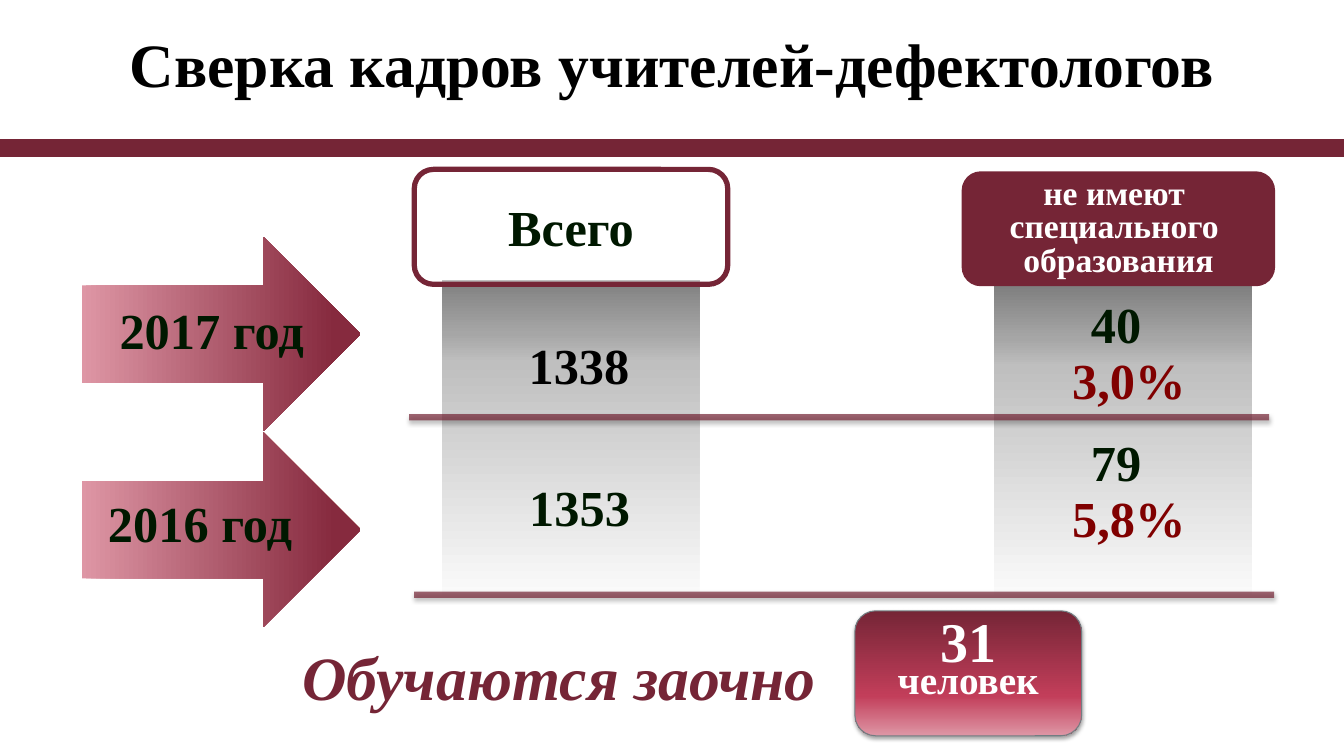
"""Builds a slide on the staffing of special education teachers."""
from lxml import etree
from pptx import Presentation
from pptx.dml.color import RGBColor
from pptx.enum import shapes, text
from pptx.oxml import ns
from pptx.util import Pt

FONT = "Times New Roman"
BLACK = RGBColor(0x00, 0x00, 0x00)
WHITE = RGBColor(0xFF, 0xFF, 0xFF)
WINE = RGBColor(0x75, 0x25, 0x36)
DARK_WINE = RGBColor(0x86, 0x2A, 0x3E)
ROSE = RGBColor(0xC2, 0x3E, 0x5A)
PINK = RGBColor(0xDE, 0x96, 0xA5)
DARK_GREEN = RGBColor(0x00, 0x18, 0x00)
RED = RGBColor(0x80, 0x00, 0x00)
SLATE = RGBColor(0x72, 0x7D, 0x82)
GRAY_STOPS = [(0, RGBColor(0xFA, 0xFA, 0xFA)), (74, RGBColor(0xBF, 0xBF, 0xBF)),
              (83, RGBColor(0xA6, 0xA6, 0xA6)), (100, RGBColor(0x80, 0x80, 0x80))]
ARROW_STOPS = [(0, PINK), (91, DARK_WINE)]
BADGE_STOPS = [(0, WINE), (68, ROSE), (100, PINK)]
MIDDLE = text.MSO_ANCHOR.MIDDLE
CENTER = text.PP_ALIGN.CENTER
SHAPE = shapes.MSO_SHAPE


def add_child(parent, tag, **attributes):
    """Append a drawing element with the given attributes."""
    element = etree.SubElement(parent, ns.qn(tag))
    for name, value in attributes.items():
        element.set(name, str(value))
    return element


def set_alpha(element, percent):
    """Make the colours inside an element partly transparent."""
    for color in list(element.iter(ns.qn("a:srgbClr"))):
        add_child(color, "a:alpha", val=percent * 1000)


def set_effects(shape, shadow=None):
    """Replace the theme shadow by none, or by (opacity, blur, distance)."""
    properties = shape._element.spPr
    for old in properties.findall(ns.qn("a:effectLst")):
        properties.remove(old)
    effects = add_child(properties, "a:effectLst")
    if shadow:
        opacity, blur, distance = shadow
        outer = add_child(effects, "a:outerShdw", blurRad=Pt(blur), dist=Pt(distance),
                          dir=5400000, rotWithShape=0)
        add_child(outer, "a:srgbClr", val=BLACK)
        set_alpha(outer, opacity)


def set_gradient(shape, stops, angle):
    """Fill a shape with a linear gradient, its angle counter-clockwise."""
    shape.fill.gradient()
    shape.fill.gradient_angle = angle
    stop_list = shape._element.spPr.find(".//" + ns.qn("a:gsLst"))
    for old in list(stop_list):
        stop_list.remove(old)
    for position, color in stops:
        stop = add_child(stop_list, "a:gs", pos=position * 1000)
        add_child(stop, "a:srgbClr", val=color)


def write(shape, lines, spacing=None, align=CENTER, anchor=MIDDLE, italic=None):
    """Write lines of (wording, size, colour), one paragraph each."""
    frame = shape.text_frame
    frame.word_wrap = True
    frame.vertical_anchor = anchor
    for index, (wording, size, color) in enumerate(lines):
        paragraph = frame.add_paragraph() if index else frame.paragraphs[0]
        paragraph.alignment = align
        if spacing:
            paragraph.line_spacing = Pt(spacing)
        run = paragraph.add_run()
        run.text = wording
        run.font.name = FONT
        run.font.size = Pt(size)
        run.font.bold = True
        run.font.italic = italic
        run.font.color.rgb = color


def add_box(slide, kind, box, fill=None, gradient=None, line=None, shadow=None):
    """Add a preset shape with a plain or gradient fill."""
    shape = slide.shapes.add_shape(kind, *map(Pt, box))
    if gradient:
        set_gradient(shape, *gradient)
    else:
        shape.fill.solid()
        shape.fill.fore_color.rgb = fill
    if line:
        shape.line.color.rgb, shape.line.width = line[0], Pt(line[1])
    else:
        shape.line.fill.background()
    set_effects(shape, shadow)
    return shape


def add_label(slide, box, lines, **style):
    """Add a text box."""
    write(slide.shapes.add_textbox(*map(Pt, box)), lines, **style)


def add_rule(slide, left, right, top, width, alpha=None, shadow=None):
    """Add a horizontal line."""
    rule = slide.shapes.add_connector(shapes.MSO_CONNECTOR.STRAIGHT,
                                      Pt(left), Pt(top), Pt(right), Pt(top))
    rule.line.color.rgb = WINE
    rule.line.width = Pt(width)
    if alpha:
        set_alpha(rule._element.spPr, alpha)
    set_effects(rule, shadow)


def add_title(slide, wording):
    """Place and fill the title placeholder."""
    title = slide.shapes.title
    title.left, title.top, title.width, title.height = map(Pt, (66.2, 12.2, 828, 78.5))
    write(title, [(wording, 44, BLACK)], spacing=40)


def main():
    """Build and save the slide."""
    presentation = Presentation()
    presentation.slide_width, presentation.slide_height = Pt(960), Pt(540)
    slide = presentation.slides.add_slide(presentation.slide_layouts[5])

    add_title(slide, "Сверка кадров учителей-дефектологов")
    add_rule(slide, 0, 960, 105.8, 12.75)

    for left, top in ((315.4, 200.2), (710, 204.5)):
        add_box(slide, SHAPE.RECTANGLE, (left, top, 184.3, 424.8 - top),
                gradient=(GRAY_STOPS, 90))

    for year, arrow_top, label_box in (("2017", 169.2, (68.4, 203, 165.6, 64.8)),
                                       ("2016", 308.9, (68.4, 321.8, 149, 103))):
        add_box(slide, SHAPE.RIGHT_ARROW, (58.3, arrow_top, 199.4, 139),
                gradient=(ARROW_STOPS, 0))
        add_label(slide, label_box, [(f"{year} год", 36, DARK_GREEN)])

    total = add_box(slide, SHAPE.ROUNDED_RECTANGLE, (295.9, 121, 223.9, 82.1),
                    fill=WHITE, line=(WINE, 3.75))
    set_alpha(total._element.spPr.find(ns.qn("a:solidFill")), 50)
    write(total, [("Всего", 36, DARK_GREEN)])

    untrained = add_box(slide, SHAPE.ROUNDED_RECTANGLE, (686.9, 122.4, 223.9, 82.1), fill=WINE)
    write(untrained, [(wording, 24, WHITE) for wording in
                      ("не имеют ", "специального ", "образования")], spacing=24)

    add_label(slide, (339.1, 235.4, 149, 51.1), [("1338", 36, BLACK)],
              anchor=text.MSO_ANCHOR.TOP)
    add_label(slide, (360, 321.8, 108, 79.9), [("1353", 36, DARK_GREEN)])
    for count, share, top, height in (("40 ", " 3,0%", 216, 73.4),
                                      ("79 ", " 5,8%", 321.8, 59)):
        add_label(slide, (693.4, top, 216.7, height),
                  [(count, 36, DARK_GREEN), (share, 36, RED)], spacing=40)

    for left, top in ((292.3, 298.1), (295.9, 424.8)):
        add_rule(slide, left, left + 614.2, top, 4.5, alpha=70, shadow=(35, 3.1, 1.8))

    badge = add_box(slide, SHAPE.ROUNDED_RECTANGLE, (610.6, 436.3, 162, 89.3),
                    gradient=(BADGE_STOPS, 270), line=(SLATE, 0.75), shadow=(38, 3.1, 1.6))
    write(badge, [("31", 40, WHITE), ("человек", 28, WHITE)], spacing=21)
    add_label(slide, (208.8, 452.9, 394.6, 60.5), [("Обучаются заочно", 44, WINE)],
              align=text.PP_ALIGN.LEFT, anchor=text.MSO_ANCHOR.TOP, italic=True)

    presentation.save("out.pptx")


if __name__ == "__main__":
    main()
